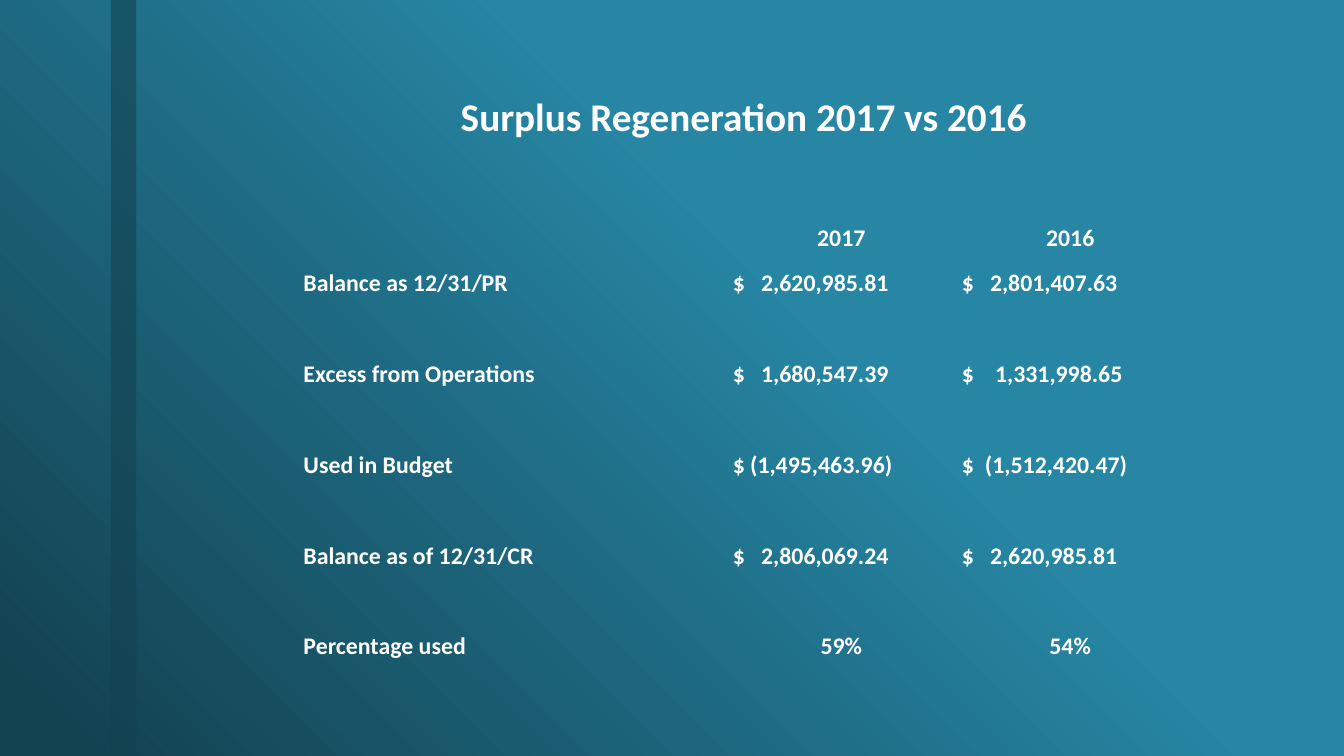
from lxml.etree import SubElement
from pptx import Presentation
from pptx.dml.color import RGBColor
from pptx.enum.shapes import MSO_SHAPE
from pptx.enum.text import MSO_ANCHOR, PP_ALIGN
from pptx.oxml.ns import qn
from pptx.util import Inches, Pt

COLORS = {"teal": "2686A4", "deep": "134251", "text": "FFFFFF"}
NO_STYLE_NO_GRID = "{2D5ABB26-0587-4C30-8999-92F81FD0307C}"

COLUMN_WIDTHS = [0.85, 0.85, 0.4, 2.11, 2.27, 2.27]
ROW_HEIGHTS = [0.66, 0.29, 0.36] + [0.45] * 10
YEAR_COLUMNS = (4, 5)
YEAR_ROW = 3

# Label, columns it spans, then (amount, gap from the dollar sign) for each year
BALANCES = [
    ("Balance as 12/31/PR", 4, ("2,620,985.81", 0.28), ("2,801,407.63", 0.28)),
    ("Excess from Operations", 4, ("1,680,547.39", 0.28), ("1,331,998.65", 0.33)),
    ("Used in Budget", 3, ("(1,495,463.96)", 0.17), ("(1,512,420.47)", 0.23)),
    ("Balance as of 12/31/CR", 4, ("2,806,069.24", 0.28), ("2,620,985.81", 0.28)),
]


class SlideBuilder:
    font = "Calibri"
    body_size = 17
    title_size = 28

    def __init__(self, slide):
        self.slide = slide

    def color(self, name):
        return RGBColor.from_string(COLORS[name])

    def background(self):
        fill = self.slide.background.fill
        fill.gradient()
        fill.gradient_angle = 225
        for stop, name, position in zip(fill.gradient_stops, ("teal", "deep"), (0.4, 0.96)):
            stop.color.rgb = self.color(name)
            stop.position = position

    def stripe(self, left, width, height, opacity):
        band = self.slide.shapes.add_shape(
            MSO_SHAPE.RECTANGLE, Inches(left), 0, Inches(width), Inches(height))
        band.shadow.inherit = False
        band.line.fill.background()
        band.fill.solid()
        band.fill.fore_color.rgb = self.color("deep")
        tint = band.element.spPr.find(qn("a:solidFill"))[0]
        SubElement(tint, qn("a:alpha"), val=str(opacity * 1000))

    def table(self, left, top):
        """Add a plain, unfilled table with small cell margins."""
        frame = self.slide.shapes.add_table(
            len(ROW_HEIGHTS), len(COLUMN_WIDTHS), Inches(left), Inches(top),
            Inches(sum(COLUMN_WIDTHS)), Inches(sum(ROW_HEIGHTS)))
        grid = frame.table
        grid.first_row = grid.horz_banding = False
        frame.element.find(".//" + qn("a:tableStyleId")).text = NO_STYLE_NO_GRID
        for column, width in zip(grid.columns, COLUMN_WIDTHS):
            column.width = Inches(width)
        for row, height in zip(grid.rows, ROW_HEIGHTS):
            row.height = Inches(height)
        for cell in grid.iter_cells():
            cell.fill.background()
            cell.vertical_anchor = MSO_ANCHOR.BOTTOM
            cell.margin_left = cell.margin_right = cell.margin_top = Inches(0.01)
            cell.margin_bottom = 0
            SubElement(cell.text_frame.paragraphs[0]._p, qn("a:endParaRPr"), sz="1200")
        return grid

    def cell_text(self, cell, text, align=PP_ALIGN.LEFT, size=None):
        paragraph = cell.text_frame.paragraphs[0]
        paragraph.alignment = align
        run = paragraph.add_run()
        run.text = text
        run.font.name = self.font
        run.font.size = Pt(size or self.body_size)
        run.font.bold = True
        run.font.color.rgb = self.color("text")

    def amount(self, cell, figure, gap):
        """Set a dollar sign and a figure that starts at its own tab stop."""
        cell.margin_left = Inches(0.06)
        properties = cell.text_frame.paragraphs[0]._p.get_or_add_pPr()
        stops = SubElement(properties, qn("a:tabLst"))
        SubElement(stops, qn("a:tab"), pos=str(Inches(gap)), algn="l")
        self.cell_text(cell, f"$\t{figure}")


def main():
    deck = Presentation()
    deck.slide_width, deck.slide_height = Inches(13.33), Inches(7.5)
    builder = SlideBuilder(deck.slides.add_slide(deck.slide_layouts[6]))
    builder.background()
    builder.stripe(1.1, 0.25, 7.5, opacity=60)

    surplus = builder.table(3, 0.75)
    title = surplus.cell(0, 0)
    title.merge(surplus.cell(0, len(COLUMN_WIDTHS) - 1))
    builder.cell_text(
        title, "Surplus Regeneration 2017 vs 2016", PP_ALIGN.CENTER, builder.title_size)

    percentage_row = YEAR_ROW + 1 + 2 * len(BALANCES)
    for row, values in ((YEAR_ROW, ("2017", "2016")), (percentage_row, ("59%", "54%"))):
        for column, value in zip(YEAR_COLUMNS, values):
            builder.cell_text(surplus.cell(row, column), value, PP_ALIGN.CENTER)

    for index, (label, span, *amounts) in enumerate(BALANCES + [("Percentage used", 4)]):
        row = YEAR_ROW + 1 + 2 * index
        heading = surplus.cell(row, 0)
        heading.merge(surplus.cell(row, span - 1))
        builder.cell_text(heading, label)
        for column, (figure, gap) in zip(YEAR_COLUMNS, amounts):
            builder.amount(surplus.cell(row, column), figure, gap)

    deck.save("out.pptx")


if __name__ == "__main__":
    main()
